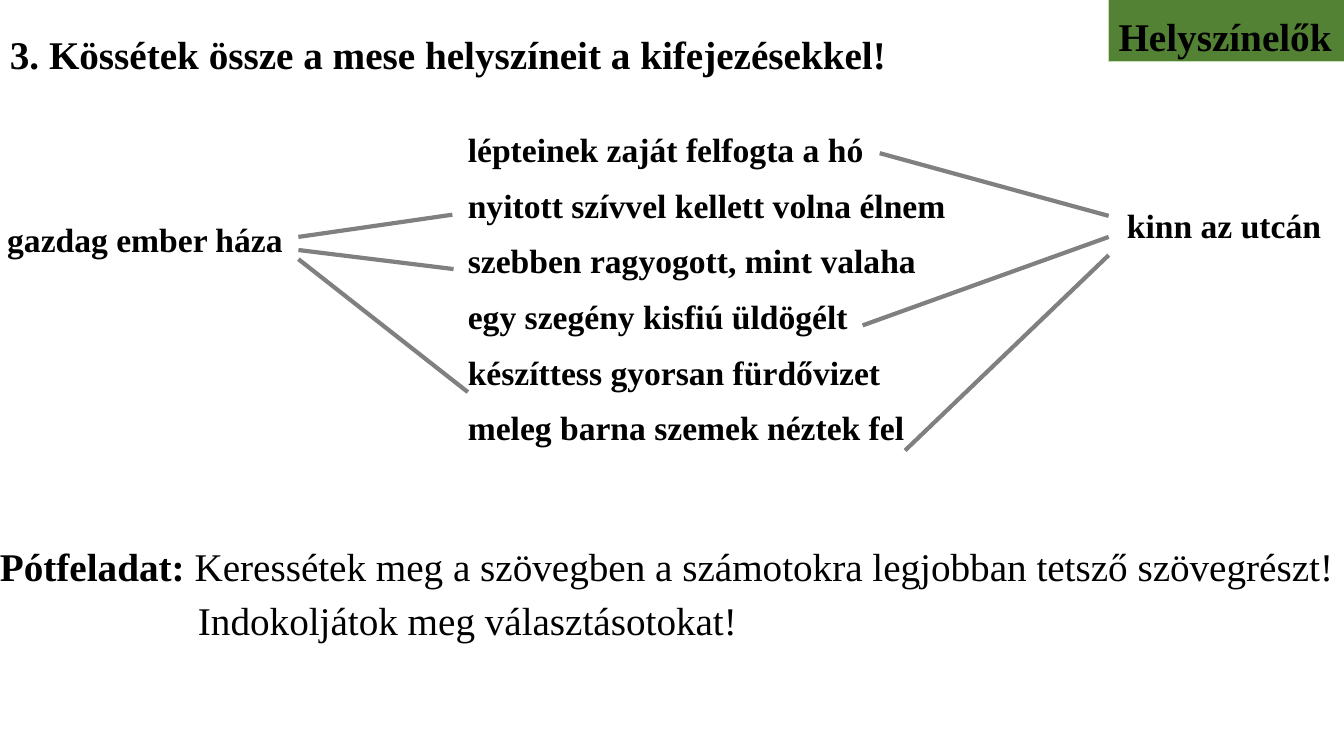
from dataclasses import dataclass

from lxml.etree import SubElement
from pptx import Presentation
from pptx.dml.color import RGBColor
from pptx.enum.shapes import MSO_CONNECTOR as Connector, MSO_SHAPE as Preset
from pptx.enum.text import MSO_ANCHOR as Anchor, MSO_AUTO_SIZE as AutoSize, PP_ALIGN as Align
from pptx.oxml.ns import qn
from pptx.slide import Slide
from pptx.util import Cm, Pt

COLORS = {"text": "000000", "badge": "548235", "badge_edge": "C5E0B4", "link": "808080"}
FONT = "Times New Roman"
LARGE, MEDIUM = 28, 24
BONUS_INDENT = Cm(4.99)


@dataclass(frozen=True)
class Frame:
    """Position and size in centimetres."""
    left: float
    top: float
    width: float
    height: float

    def lengths(self) -> list[Cm]:
        return [Cm(value) for value in (self.left, self.top, self.width, self.height)]


@dataclass(frozen=True)
class Column:
    """One table column: its lines of text, and its margins in centimetres."""
    width: float
    lines: tuple[str, ...]
    margin_left: float
    margin_top: float
    spacing: float


@dataclass(frozen=True)
class Link:
    """A line from a place to a phrase, in centimetres."""
    place: tuple[float, float]
    phrase: tuple[float, float]


BADGE = Frame(27.94, 0, 5.94, 1.55)
TITLE = Frame(0, 0.46, 22.81, 1.55)
TABLE = Frame(0, 2.87, 33.86, 8.69)
BONUS = Frame(-0.25, 13.36, 34.52, 3)

COLUMNS = (
    Column(10.34, ("gazdag ember háza",), 0.18, 2.59, 1.15),
    Column(15.52, (
        "lépteinek zaját felfogta a hó",
        "nyitott szívvel kellett volna élnem",
        "szebben ragyogott, mint valaha",
        "egy szegény kisfiú üldögélt",
        "készíttess gyorsan fürdővizet",
        "meleg barna szemek néztek fel",
    ), 1.45, 0, 1.5),
    Column(8, ("kinn az utcán",), 2.54, 2.24, 1.15),
)

HOUSE_X, STREET_X = 7.52, 27.94
LINKS = (
    Link((STREET_X, 5.44), (22.17, 3.86)),
    Link((HOUSE_X, 5.97), (11.4, 5.41)),
    Link((STREET_X, 5.97), (21.74, 8.2)),
    Link((HOUSE_X, 6.53), (11.79, 9.88)),
    Link((HOUSE_X, 6.3), (11.43, 6.78)),
    Link((STREET_X, 6.43), (22.81, 11.35)),
)


def color(name: str) -> RGBColor:
    return RGBColor.from_string(COLORS[name])


def style_paragraph(para, size: int, spacing: float = 1.15, after: int = 10) -> None:
    para.alignment = Align.LEFT
    para.line_spacing = spacing
    para.space_after = Pt(after)
    para.font.name = FONT
    para.font.size = Pt(size)
    para.font.color.rgb = color("text")


def fill_heading(box, text: str, wrap: bool) -> None:
    frame = box.text_frame
    frame.word_wrap = wrap
    frame.auto_size = AutoSize.SHAPE_TO_FIT_TEXT
    frame.vertical_anchor = Anchor.TOP
    para = frame.paragraphs[0]
    para.text = text
    style_paragraph(para, LARGE)
    para.font.bold = True


def add_headings(page: Slide) -> None:
    badge = page.shapes.add_shape(Preset.RECTANGLE, *BADGE.lengths())
    badge.shadow.inherit = False
    badge.fill.solid()
    badge.fill.fore_color.rgb = color("badge")
    badge.line.color.rgb = color("badge_edge")
    badge.line.width = Pt(0.75)
    fill_heading(badge, "Helyszínelők", wrap=False)
    title = page.shapes.add_textbox(*TITLE.lengths())
    fill_heading(title, "3. Kössétek össze a mese helyszíneit a kifejezésekkel!", wrap=True)


def add_matching_table(page: Slide) -> None:
    table = page.shapes.add_table(1, len(COLUMNS), *TABLE.lengths()).table
    for index, column in enumerate(COLUMNS):
        table.columns[index].width = Cm(column.width)
        cell = table.cell(0, index)
        cell.fill.background()
        cell.margin_left, cell.margin_right = Cm(column.margin_left), Cm(0.18)
        cell.margin_top, cell.margin_bottom = Cm(column.margin_top), Cm(0)
        cell.text = "\n".join(column.lines)
        for para in cell.text_frame.paragraphs:
            style_paragraph(para, MEDIUM, column.spacing, after=0)
            para.font.bold = True


def add_bonus_task(page: Slide) -> None:
    """Add the extra task, its second line hanging under the question."""
    frame = page.shapes.add_textbox(*BONUS.lengths()).text_frame
    frame.word_wrap = True
    frame.auto_size = AutoSize.SHAPE_TO_FIT_TEXT
    para = frame.paragraphs[0]
    properties = para._p.get_or_add_pPr()
    properties.set("marL", str(BONUS_INDENT))
    properties.set("indent", str(-BONUS_INDENT))
    style_paragraph(para, LARGE)
    label = para.add_run()
    label.text = "Pótfeladat: "
    label.font.bold = True
    para.add_run().text = (
        "Keressétek meg a szövegben a számotokra legjobban tetsző szövegrészt! "
        "Indokoljátok meg választásotokat!"
    )


def add_link(page: Slide, link: Link) -> None:
    ends = [Cm(value) for value in (*link.place, *link.phrase)]
    line = page.shapes.add_connector(Connector.STRAIGHT, *ends)
    line.line.color.rgb = color("link")
    line.line.width = Pt(3)
    SubElement(line._element.spPr, qn("a:effectLst"))


def main() -> None:
    deck = Presentation()
    deck.slide_width, deck.slide_height = Cm(33.87), Cm(19.05)
    page = deck.slides.add_slide(deck.slide_layouts[6])
    add_headings(page)
    add_matching_table(page)
    add_bonus_task(page)
    for link in LINKS:
        add_link(page, link)
    deck.save("out.pptx")


if __name__ == "__main__":
    main()
